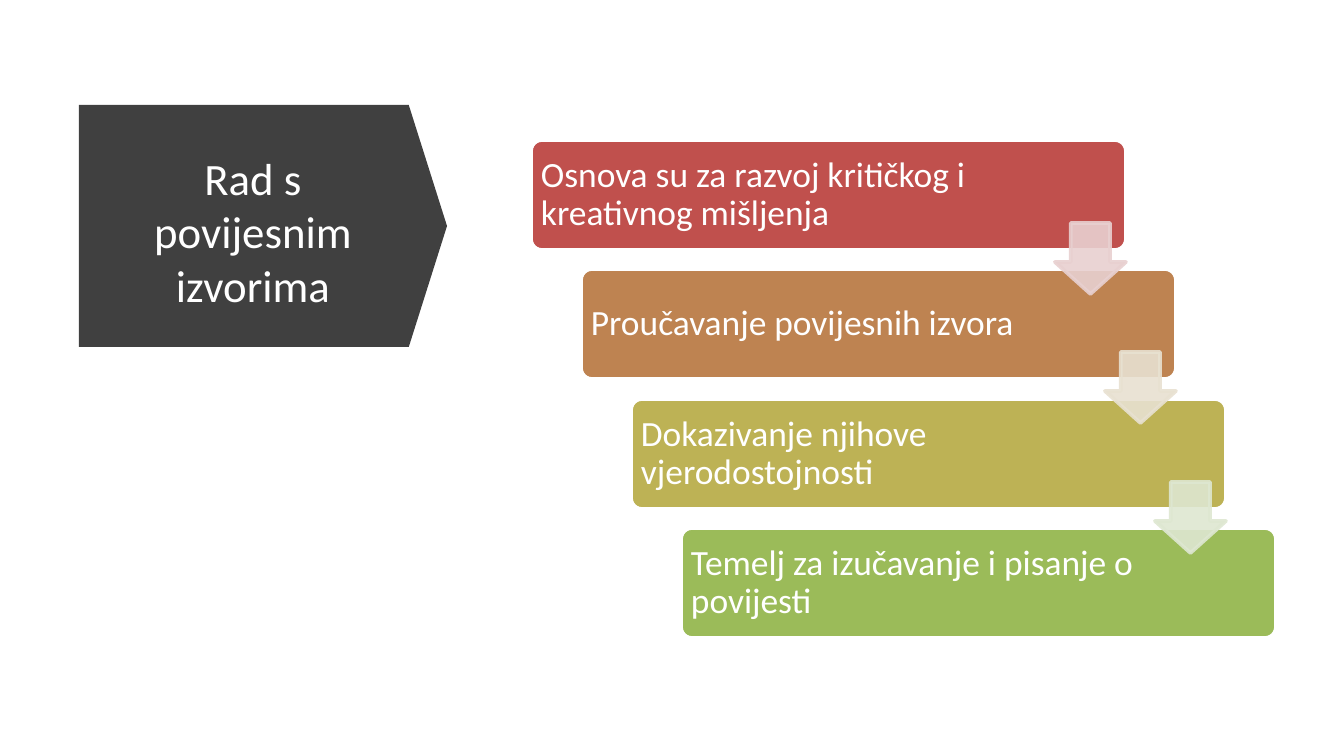
import pptx
import pptx.util
import pptx.dml.color
import pptx.enum.shapes
import pptx.enum.text
import pptx.oxml.ns
import lxml.etree

RGB = pptx.dml.color.RGBColor
KIND = pptx.enum.shapes.MSO_SHAPE
ALIGN = pptx.enum.text.PP_ALIGN
WHITE = RGB(255, 255, 255)
DARK = RGB(0x40, 0x40, 0x40)
RED = RGB(0xC0, 0x50, 0x4D)
BROWN = RGB(0xBE, 0x83, 0x51)
GOLD = RGB(0xBD, 0xB2, 0x55)
GREEN = RGB(0x9B, 0xBB, 0x59)
PINK = RGB(0xE8, 0xD0, 0xD0)
CREAM = RGB(0xE8, 0xE1, 0xD1)
MINT = RGB(0xDE, 0xE7, 0xD1)
SCALE = 914400 / 134.4

deck = pptx.Presentation()
deck.slide_width = round(1344 * SCALE)
deck.slide_height = round(756 * SCALE)
slide = deck.slides.add_slide(deck.slide_layouts[6])


def draw(kind, box, ratios, fill, line=None):
    shape = slide.shapes.add_shape(kind, *[round(n * SCALE) for n in box])
    shape.shadow.inherit = False
    for i, ratio in enumerate(ratios):
        shape.adjustments[i] = ratio
    shape.fill.solid()
    shape.fill.fore_color.rgb = fill
    if line is None:
        shape.line.fill.background()
    else:
        shape.line.color.rgb = line
        shape.line.width = pptx.util.Pt(2)
    return shape


def write(words, box, size, align, inset, space):
    label = slide.shapes.add_textbox(*[round(n * SCALE) for n in box])
    frame = label.text_frame
    frame.word_wrap = True
    frame.vertical_anchor = pptx.enum.text.MSO_ANCHOR.MIDDLE
    frame.margin_left = frame.margin_right = round(inset * SCALE)
    frame.margin_top = frame.margin_bottom = round(inset * SCALE)
    frame.text = words
    para = frame.paragraphs[0]
    para.alignment = align
    para.line_spacing = space
    font = para.runs[0].font
    font.name = "Calibri"
    font.size = pptx.util.Pt(size)
    font.color.rgb = WHITE


banner = draw(KIND.DOWN_ARROW, (142, 42, 242, 368), (1, 0.158), DARK)
banner.rotation = 270
write("Rad s povijesnim izvorima", (106, 133, 294, 196), 24, ALIGN.CENTER, 13, 1.0)

steps = [
    ("Osnova su za razvoj kritičkog i kreativnog mišljenja", RED),
    ("Proučavanje povijesnih izvora", BROWN),
    ("Dokazivanje njihove vjerodostojnosti", GOLD),
    ("Temelj za izučavanje i pisanje o povijesti", GREEN),
]
for i, (words, fill) in enumerate(steps):
    left, top = 531 + i * 50, 140 + i * 259 // 2
    draw(KIND.ROUNDED_RECTANGLE, (left, top, 595, 110), (0.1,), fill, WHITE)
    write(words, (left, top, 475, 110), 19, ALIGN.LEFT, 10, 0.9)

for i, tint in enumerate((PINK, CREAM, MINT)):
    box = (1055 + i * 50, 223 + i * 259 // 2, 71, 71)
    arrow = draw(KIND.DOWN_ARROW, box, (0.55, 0.45), tint, tint)
    for color in arrow.element.spPr.iter(pptx.oxml.ns.qn("a:srgbClr")):
        alpha = lxml.etree.SubElement(color, pptx.oxml.ns.qn("a:alpha"))
        alpha.set("val", "90000")

deck.save("out.pptx")
